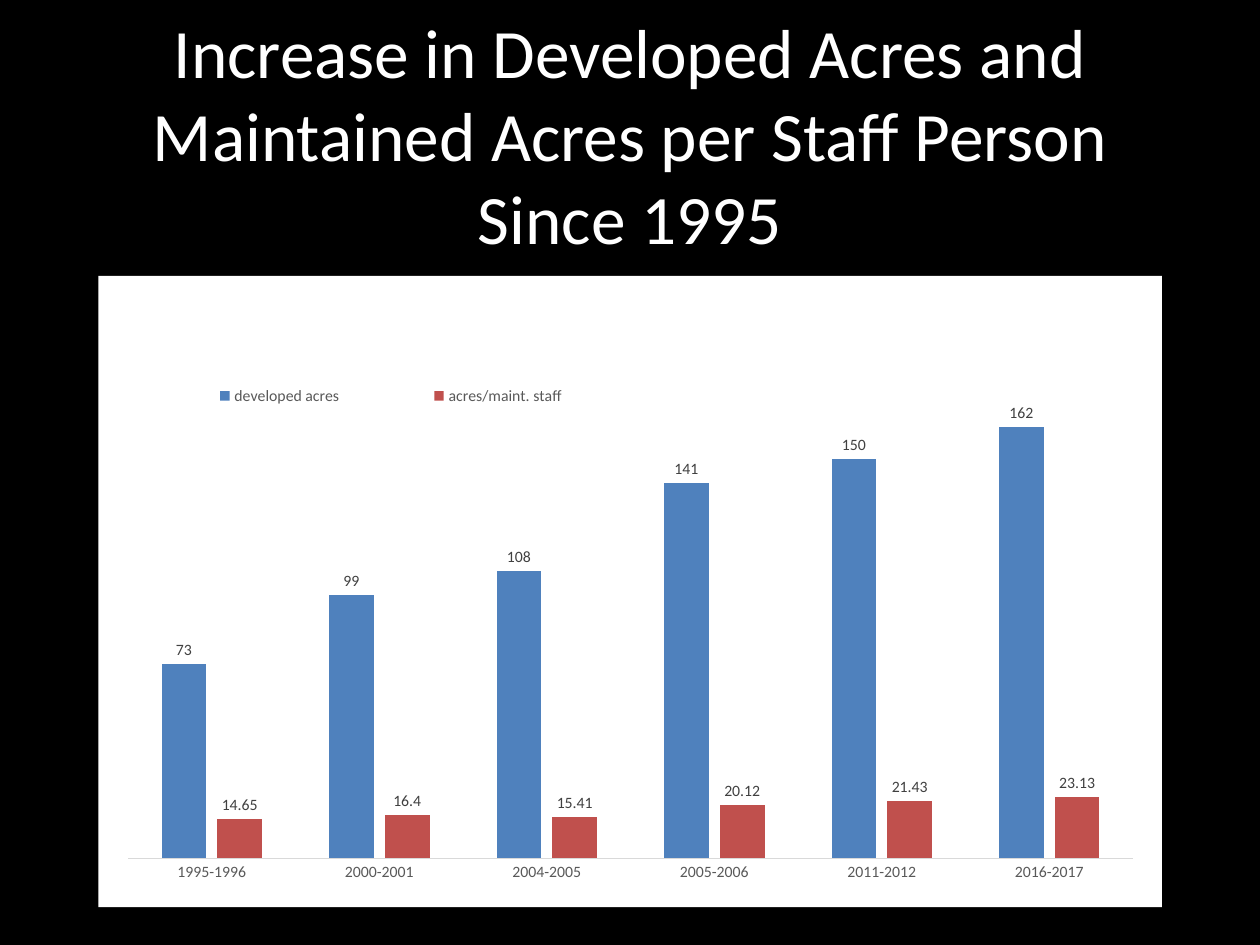
"""Build a slide with a column chart of developed acres and acres per staff person."""
from lxml import etree
from pptx import Presentation
from pptx import util as u
from pptx.chart.data import CategoryChartData
from pptx.dml.color import RGBColor
from pptx.enum import chart as ch, text
from pptx.oxml import parse_xml
from pptx.oxml.ns import nsdecls, qn

Pt = u.Pt
BLACK = RGBColor(0x00, 0x00, 0x00)
WHITE = RGBColor(0xFF, 0xFF, 0xFF)
BLUE = RGBColor(0x4F, 0x81, 0xBD)
RED = RGBColor(0xC0, 0x50, 0x4D)
GRAY = RGBColor(0x59, 0x59, 0x59)
DARK = RGBColor(0x40, 0x40, 0x40)
PALE = RGBColor(0xD9, 0xD9, 0xD9)


def style(font, size, color):
    font.name, font.size = "Calibri", Pt(size)
    font.color.rgb = color


def place(node, at, box, inner=False):
    for old in node.findall(qn("c:layout")):
        node.remove(old)
    root = etree.Element(qn("c:layout"))
    man = etree.SubElement(root, qn("c:manualLayout"))
    vals = {"layoutTarget": "inner"} if inner else {}
    vals.update({"xMode": "edge", "yMode": "edge"})
    vals.update(zip("xywh", box))
    for key, val in vals.items():
        etree.SubElement(man, qn("c:" + key)).set("val", str(val))
    node.insert(at, root)


deck = Presentation()
deck.slide_width, deck.slide_height = Pt(720), Pt(540)
slide = deck.slides.add_slide(deck.slide_layouts[6])
slide.background.fill.solid()
slide.background.fill.fore_color.rgb = BLACK

frame = slide.shapes.add_textbox(Pt(36), Pt(21.6), Pt(648), Pt(110)).text_frame
form = {"word_wrap": True, "vertical_anchor": text.MSO_ANCHOR.MIDDLE}
for key, val in form.items():
    setattr(frame, key, val)
title = frame.paragraphs[0]
title.text = "Increase in Developed Acres and Maintained Acres per Staff Person Since 1995"
title.alignment = text.PP_ALIGN.CENTER
style(title.runs[0].font, 39.6, WHITE)

data = CategoryChartData()
data.categories = ["1995-1996", "2000-2001", "2004-2005",
                   "2005-2006", "2011-2012", "2016-2017"]
data.add_series("developed acres", [73, 99, 108, 141, 150, 162])
data.add_series("acres/maint. staff", [14.65, 16.4, 15.41, 20.12, 21.43, 23.13])
chart = slide.shapes.add_chart(ch.XL_CHART_TYPE.COLUMN_CLUSTERED, Pt(56.2),
                               Pt(157.7), Pt(607.7), Pt(360.7), data).chart
chart.has_title = False
style(chart.font, 10, BLACK)
space = chart.element
space.find(qn("c:chart")).addnext(parse_xml(
    f'<c:spPr {nsdecls("c", "a")}><a:solidFill><a:srgbClr val="{WHITE}"/>'
    '</a:solidFill><a:ln><a:noFill/></a:ln></c:spPr>'))
place(space.find(".//" + qn("c:plotArea")), 0, (0.028, 0.164, 0.945, 0.759), True)

chart.has_legend = True
legend = chart.legend
form = {"position": ch.XL_LEGEND_POSITION.TOP, "include_in_layout": False}
for key, val in form.items():
    setattr(legend, key, val)
style(legend.font, 9, GRAY)
place(space.find(".//" + qn("c:legend")), 1, (0.03, 0.16, 0.49, 0.06))

axis = chart.category_axis
axis.major_tick_mark = ch.XL_TICK_MARK.NONE
style(axis.tick_labels.font, 9, GRAY)
axis.format.line.width = Pt(0.75)
axis.format.line.color.rgb = PALE
form = {"minimum_scale": 0, "maximum_scale": 180,
        "has_major_gridlines": False, "visible": False}
for key, val in form.items():
    setattr(chart.value_axis, key, val)

plot = chart.plots[0]
form = {"gap_width": 150, "overlap": -25, "vary_by_categories": False}
for key, val in form.items():
    setattr(plot, key, val)
for bar, color in zip(plot.series, (BLUE, RED)):
    bar.format.fill.solid()
    bar.format.fill.fore_color.rgb = color
    tags = bar.data_labels
    form = {"show_value": True, "position": ch.XL_LABEL_POSITION.OUTSIDE_END}
    for key, val in form.items():
        setattr(tags, key, val)
    style(tags.font, 9, DARK)

deck.save("out.pptx")
